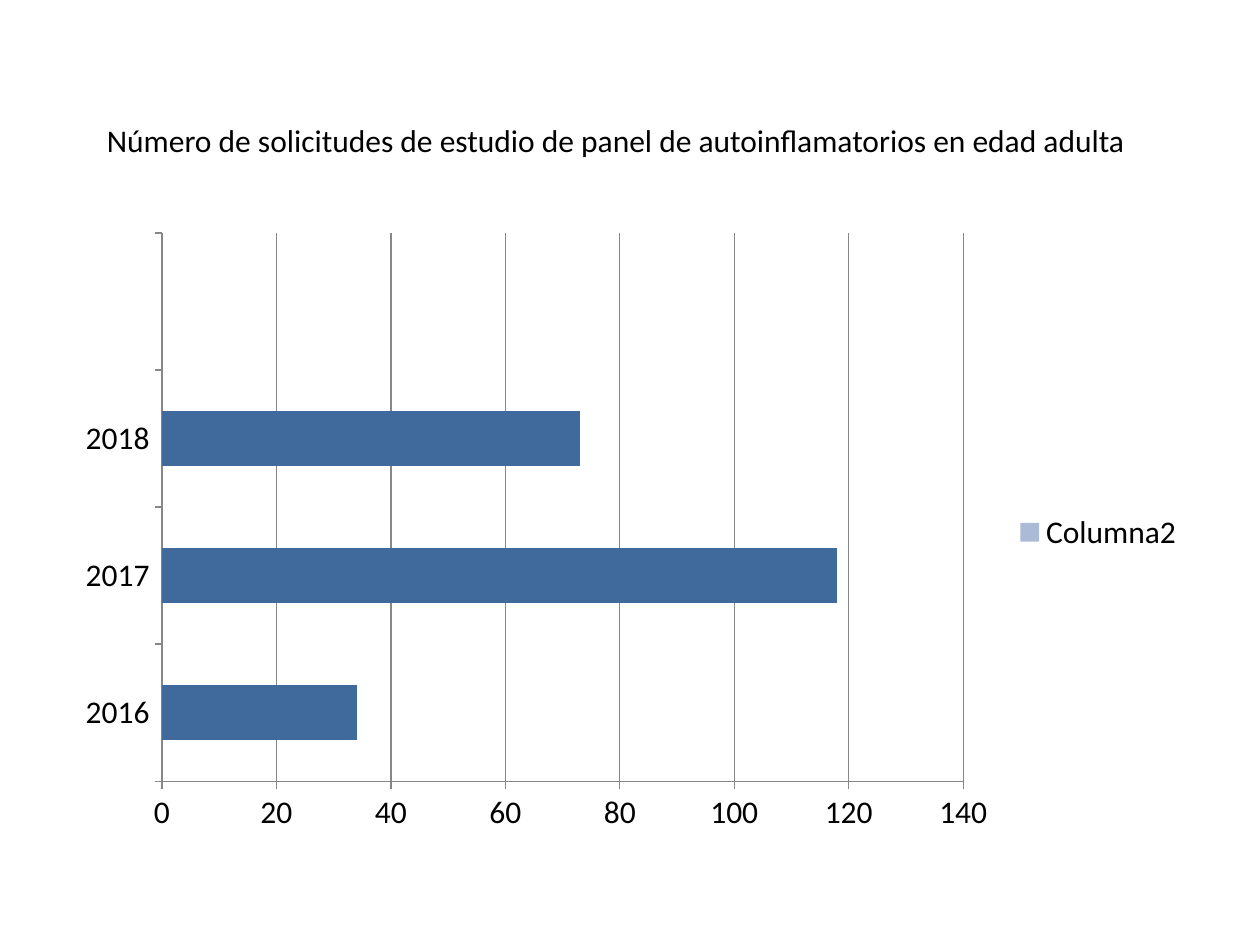
from lxml import etree
from pptx import Presentation
from pptx.chart.data import CategoryChartData
from pptx.dml.color import RGBColor
from pptx.enum.chart import XL_CHART_TYPE, XL_LEGEND_POSITION, XL_TICK_MARK
from pptx.oxml.ns import qn
from pptx.util import Inches, Pt

TITLE = "Número de solicitudes de estudio de panel de autoinflamatorios en edad adulta"
YEARS = ["2016", "2017", "2018", ""]
SERIES = [
    ("Análisis Autoinflamatorios", [34, 118, 73, None], "406A9C"),
    ("Series 2", [None] * 4, "7394C5"),
    ("Columna2", [None] * 4, "AABAD7"),
]
HIDDEN_IN_LEGEND = [2, 1]  # stacked bars list their legend entries in reverse
FONT, SIZE, TEXT, GRID = "Calibri", Pt(18), "000000", "878787"


def rgb(color):
    return RGBColor.from_string(color)


def style_font(font):
    font.name, font.size = FONT, SIZE
    font.color.rgb = rgb(TEXT)


def style_line(line):
    line.color.rgb = rgb(GRID)
    line.width = Pt(0.75)


def hide_legend_entry(legend, index):
    entry = etree.Element(qn("c:legendEntry"))
    etree.SubElement(entry, qn("c:idx")).set("val", str(index))
    etree.SubElement(entry, qn("c:delete")).set("val", "1")
    legend._element.find(qn("c:legendPos")).addnext(entry)


def add_title(s):
    box = s.shapes.add_textbox(Inches(0.75), Inches(0.91), Inches(8.58), Inches(0.4))
    tf = box.text_frame
    tf.word_wrap = True
    p = tf.paragraphs[0]
    p.text = TITLE
    style_font(p.font)


def add_requests_chart(s):
    data = CategoryChartData()
    data.categories = YEARS
    for name, values, _ in SERIES:
        data.add_series(name, values)
    chart = s.shapes.add_chart(
        XL_CHART_TYPE.BAR_STACKED,
        Inches(0.5), Inches(1.75), Inches(9), Inches(4.95), data,
    ).chart
    chart.has_title = False
    style_font(chart.font)

    plot = chart.plots[0]
    plot.gap_width, plot.overlap = 150, 100
    plot.vary_by_categories = False
    for series, (_, _, color) in zip(plot.series, SERIES):
        series.format.fill.solid()
        series.format.fill.fore_color.rgb = rgb(color)

    for axis in (chart.category_axis, chart.value_axis):
        axis.major_tick_mark = XL_TICK_MARK.OUTSIDE
        axis.minor_tick_mark = XL_TICK_MARK.NONE
        style_line(axis.format.line)
    scale = chart.value_axis
    scale.minimum_scale, scale.maximum_scale, scale.major_unit = 0, 140, 20
    scale.has_major_gridlines = True
    style_line(scale.major_gridlines.format.line)

    chart.has_legend = True
    chart.legend.position = XL_LEGEND_POSITION.RIGHT
    chart.legend.include_in_layout = False
    for index in HIDDEN_IN_LEGEND:
        hide_legend_entry(chart.legend, index)


def main():
    prs = Presentation()
    prs.slide_width, prs.slide_height = Inches(10), Inches(7.5)
    s = prs.slides.add_slide(prs.slide_layouts[6])
    add_requests_chart(s)
    add_title(s)
    prs.save("out.pptx")


if __name__ == "__main__":
    main()
